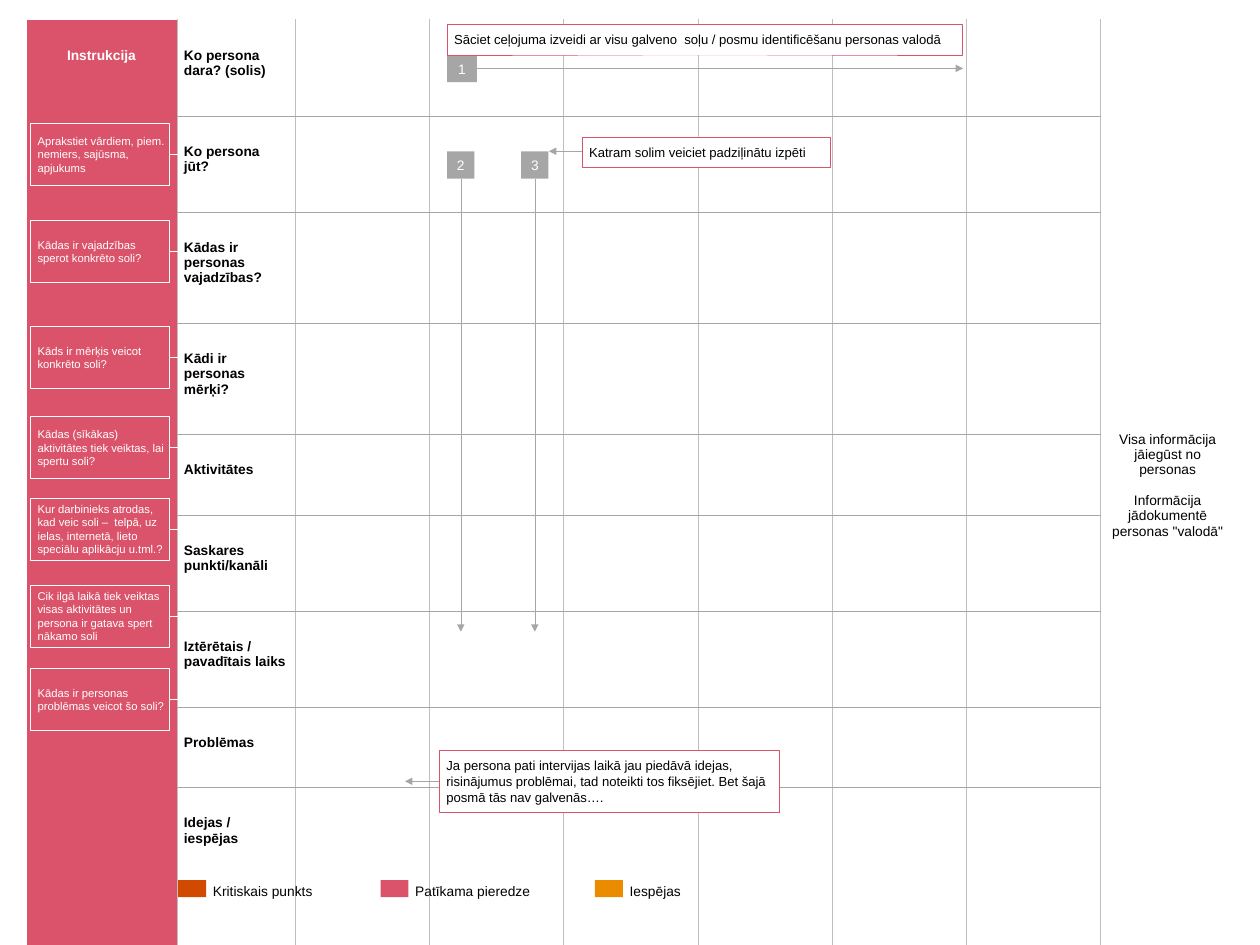
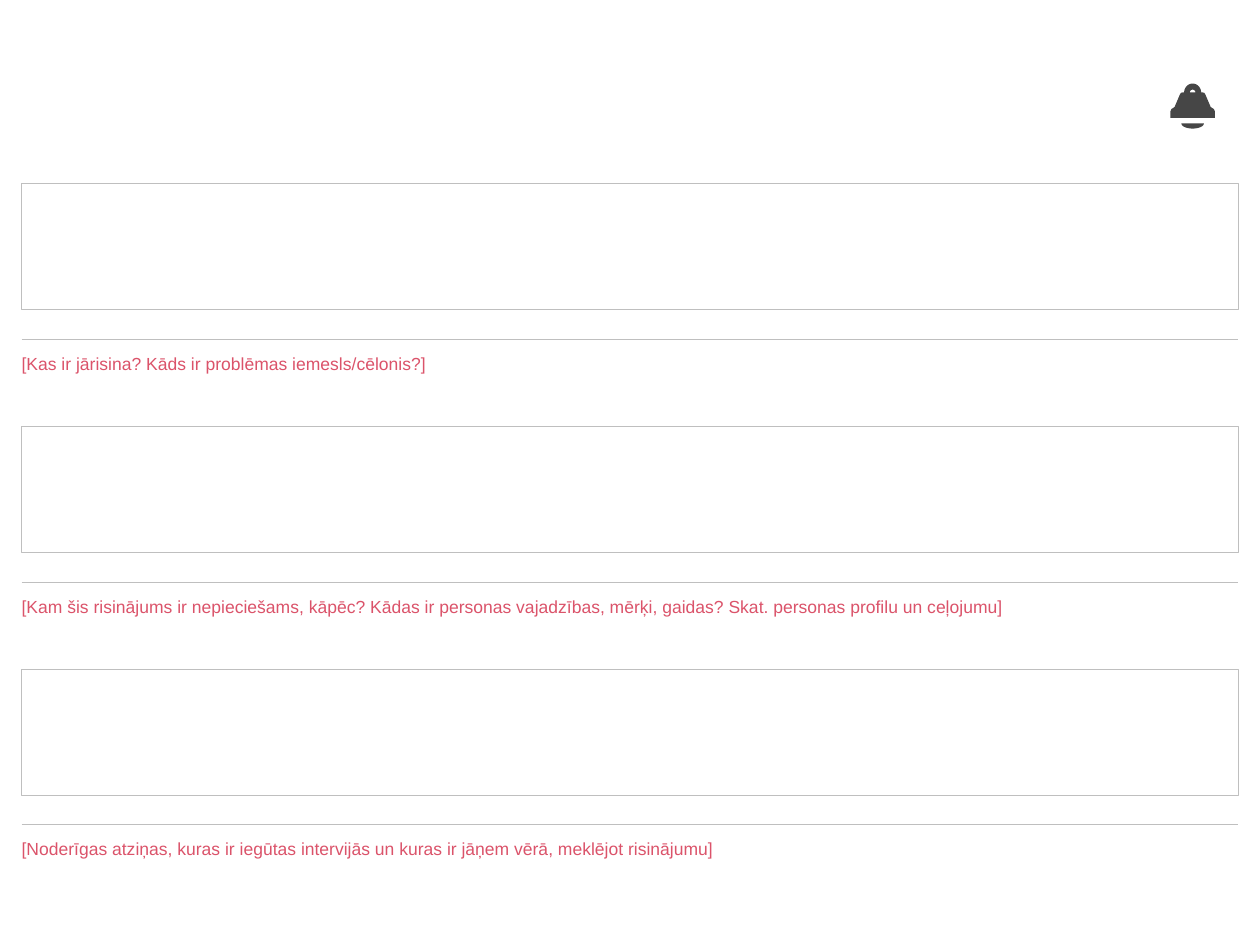
"""Build a persona journey canvas and a problem definition sheet."""
import math
from dataclasses import dataclass

from lxml import etree
from pptx import Presentation
from pptx import util as u
from pptx.dml.color import RGBColor
from pptx.enum import shapes, text
from pptx.oxml.ns import qn

Cm, Pt = u.Cm, u.Pt
FONT = "Arial"
WHITE = RGBColor(0xFF, 0xFF, 0xFF)
BLACK = RGBColor(0, 0, 0)
ROSE = RGBColor(0xDB, 0x53, 0x6A)
ORANGE = RGBColor(0xD0, 0x4A, 0x02)
AMBER = RGBColor(0xEB, 0x8C, 0x00)
GREY = RGBColor(0xA6, 0xA6, 0xA6)
LIGHT_GREY = RGBColor(0xBF, 0xBF, 0xBF)
CHARCOAL = RGBColor(0x46, 0x46, 0x46)
HAIRLINE = 0.25
LEFT, CENTER = text.PP_ALIGN.LEFT, text.PP_ALIGN.CENTER

COLUMN_WIDTHS = [4.25, 3.33] + [3.79] * 7
CELL_INSETS = (0.2, 0.79, 0.2, 0.79)
HINT_LEFT, HINT_WIDTH, HINT_HEIGHT = 0.86, 3.91, 1.75
BADGE_SIZE = 0.77


@dataclass
class Style:
    """Look of the text in a box or cell."""
    size: float
    color: RGBColor = BLACK
    bold: bool = False
    align: text.PP_ALIGN = LEFT


@dataclass
class Box:
    """Rectangle with an optional fill, outline and text, in centimetres."""
    left: float
    top: float
    width: float
    height: float
    fill: RGBColor | None = None
    line: RGBColor | None = None
    words: str = ""
    style: Style | None = None
    insets: tuple = (0.25, 0.13, 0.25, 0.13)


@dataclass
class Line:
    """Straight line, with an arrowhead at its end if asked."""
    x1: float
    y1: float
    x2: float
    y2: float
    color: RGBColor = GREY
    weight: float = HAIRLINE
    arrow: bool = False


@dataclass
class Step:
    """Row of the journey table."""
    label: str
    height: float


@dataclass
class Hint:
    """Instruction beside a journey row."""
    top: float
    words: str


@dataclass
class LegendItem:
    """Coloured swatch with its label."""
    left: float
    color: RGBColor
    label: str
    label_width: float


@dataclass
class Question:
    """Prompt under an answer box."""
    words: str
    width: float


HEADING = Style(11, WHITE, True, CENTER)
STEP_LABEL = Style(11, bold=True)
SIDE_NOTE = Style(11, align=CENTER)
BADGE_STYLE = Style(11, WHITE, align=CENTER)
HINT_STYLE = Style(9, WHITE)
CALLOUT_STYLE = Style(10.5)
LEGEND_STYLE = Style(11)
QUESTION_STYLE = Style(14, ROSE)

STEPS = [
    Step("Ko persona dara? (solis)", 2.71),
    Step("Ko persona jūt?", 2.71),
    Step("Kādas ir personas vajadzības?", 3.14),
    Step("Kādi ir personas mērķi?", 3.14),
    Step("Aktivitātes", 2.27),
    Step("Saskares punkti/kanāli", 2.71),
    Step("Iztērētais / pavadītais laiks", 2.71),
    Step("Problēmas", 2.27),
    Step("Idejas / iespējas", 4.45),
]
SIDE_NOTES = ["Visa informācija jāiegūst no personas",
              "Informācija jādokumentē personas \"valodā\""]
HINTS = [
    Hint(3.48, "Aprakstiet vārdiem, piem. nemiers, sajūsma, apjukums"),
    Hint(6.22, "Kādas ir vajadzības sperot konkrēto soli?"),
    Hint(9.22, "Kāds ir mērķis veicot konkrēto soli?"),
    Hint(11.76, "Kādas (sīkākas)  aktivitātes tiek veiktas, lai spertu soli?"),
    Hint(14.05, "Kur darbinieks atrodas, kad veic soli –  telpā, uz ielas, "
                "internetā, lieto speciālu aplikācju u.tml.?"),
    Hint(16.51, "Cik ilgā laikā tiek veiktas visas aktivitātes un persona "
                "ir gatava spert nākamo soli"),
    Hint(18.87, "Kādas ir personas problēmas veicot šo soli?"),
]
LEGEND = [
    LegendItem(5.03, ORANGE, "Kritiskais punkts", 2.95),
    LegendItem(10.74, ROSE, "Patīkama pieredze", 3.25),
    LegendItem(16.79, AMBER, "Iespējas", 1.57),
]
QUESTIONS = [
    Question("[Kas ir jārisina? Kāds ir problēmas iemesls/cēlonis?]", 11.48),
    Question("[Kam šis risinājums ir nepieciešams, kāpēc? Kādas ir personas "
             "vajadzības, mērķi, gaidas? Skat. personas profilu un ceļojumu]", 27.84),
    Question("[Noderīgas atziņas, kuras ir iegūtas intervijās un kuras ir "
             "jāņem vērā, meklējot risinājumu]", 19.61),
]


def style_paragraph(paragraph, words: str, style: Style) -> None:
    """Fill a paragraph and set its font."""
    paragraph.text = words
    paragraph.alignment = style.align
    font = paragraph.font
    font.name, font.size, font.bold = FONT, Pt(style.size), style.bold
    font.color.rgb = style.color


def set_insets(target, insets: tuple) -> None:
    """Set left, top, right and bottom margins of a cell or text frame."""
    for side, inset in zip(("left", "top", "right", "bottom"), insets):
        setattr(target, f"margin_{side}", Cm(inset))


def draw_box(slide, box: Box) -> None:
    """Draw a rectangle."""
    shape = slide.shapes.add_shape(shapes.MSO_SHAPE.RECTANGLE, Cm(box.left), Cm(box.top),
                                   Cm(box.width), Cm(box.height))
    shape.shadow.inherit = False
    if box.fill is None:
        shape.fill.background()
    else:
        shape.fill.solid()
        shape.fill.fore_color.rgb = box.fill
    if box.line is None:
        shape.line.fill.background()
    else:
        shape.line.color.rgb = box.line
        shape.line.width = Pt(HAIRLINE)
    if box.style:
        frame = shape.text_frame
        frame.word_wrap = True
        frame.vertical_anchor = text.MSO_ANCHOR.MIDDLE
        set_insets(frame, box.insets)
        style_paragraph(frame.paragraphs[0], box.words, box.style)


def draw_line(slide, line: Line) -> None:
    """Draw a connector."""
    connector = slide.shapes.add_connector(shapes.MSO_CONNECTOR.STRAIGHT, Cm(line.x1),
                                           Cm(line.y1), Cm(line.x2), Cm(line.y2))
    connector.line.color.rgb = line.color
    connector.line.width = Pt(line.weight)
    if line.arrow:
        etree.SubElement(connector.line._get_or_add_ln(), qn("a:tailEnd"), type="triangle")
    etree.SubElement(connector._element.spPr, qn("a:effectLst"))


def draw_label(slide, left: float, top: float, width: float, height: float,
               words: str, style: Style, top_inset: float = 0) -> None:
    """Draw one unwrapped line of text."""
    frame = slide.shapes.add_textbox(Cm(left), Cm(top), Cm(width), Cm(height)).text_frame
    frame.word_wrap = False
    frame.auto_size = text.MSO_AUTO_SIZE.SHAPE_TO_FIT_TEXT
    set_insets(frame, (0, top_inset, 0, 0))
    style_paragraph(frame.paragraphs[0], words, style)


def draw_callout(slide, left: float, top: float, width: float, height: float,
                 words: str) -> None:
    """Draw a white note with a rose outline."""
    draw_box(slide, Box(left, top, width, height, WHITE, ROSE, words, CALLOUT_STYLE,
                        (0.2, 0.2, 0.2, 0.2)))


def set_border(cell, side: str, color: RGBColor) -> None:
    """Add a hairline to one side of a cell."""
    line = etree.SubElement(cell._tc.get_or_add_tcPr(), qn(f"a:ln{side}"),
                            w=str(Pt(HAIRLINE)))
    fill = etree.SubElement(line, qn("a:solidFill"))
    etree.SubElement(fill, qn("a:srgbClr"), val=str(color))


def draw_journey_table(slide) -> None:
    """Draw the journey grid with its instruction band and side note."""
    last_row, last_column = len(STEPS) - 1, len(COLUMN_WIDTHS) - 1
    table = slide.shapes.add_table(
        len(STEPS), len(COLUMN_WIDTHS), Cm(0.74), Cm(0.56), Cm(sum(COLUMN_WIDTHS)),
        Cm(sum(step.height for step in STEPS))).table
    table.first_row = table.horz_banding = False
    for column, width in zip(table.columns, COLUMN_WIDTHS):
        column.width = Cm(width)
    for row_index, step in enumerate(STEPS):
        table.rows[row_index].height = Cm(step.height)
        for column_index in range(last_column + 1):
            cell = table.cell(row_index, column_index)
            inner = 0 < column_index < last_column
            if column_index > 0:
                set_border(cell, "L", LIGHT_GREY)
            if column_index < last_column:
                set_border(cell, "R", LIGHT_GREY)
            if inner and row_index > 0:
                set_border(cell, "T", GREY)
            if inner and row_index < last_row:
                set_border(cell, "B", GREY)
            cell.fill.background()
        label_cell = table.cell(row_index, 1)
        set_insets(label_cell, CELL_INSETS)
        style_paragraph(label_cell.text_frame.paragraphs[0], step.label, STEP_LABEL)

    band, side = table.cell(0, 0), table.cell(0, last_column)
    band.merge(table.cell(last_row, 0))
    side.merge(table.cell(last_row, last_column))
    for cell in (band, side):
        set_insets(cell, CELL_INSETS)
    band.fill.solid()
    band.fill.fore_color.rgb = ROSE
    style_paragraph(band.text_frame.paragraphs[0], "Instrukcija", HEADING)
    side.vertical_anchor = text.MSO_ANCHOR.MIDDLE
    first, second = side.text_frame.paragraphs[0], side.text_frame.add_paragraph()
    for paragraph, words in zip((first, second), SIDE_NOTES):
        style_paragraph(paragraph, words, SIDE_NOTE)
    second.space_before = Pt(12.5)


def draw_bell(slide) -> None:
    """Draw the bell icon."""
    center = 33.66

    def dome(radius: float, height: float, base: float) -> list:
        angles = [math.pi * step / 16 for step in range(17)]
        return [(radius * math.cos(a), base - height * math.sin(a)) for a in angles]

    right = [(0.63, 3.33), (0.63, 3.15), (0.6, 3.08), (0.51, 3.02), (0.36, 2.67),
             (0.33, 2.62), (0.28, 2.61)]
    body = right + dome(0.24, 0.25, 2.61) + [(-x, y) for x, y in reversed(right)]
    outlines = [[(Cm(center + x), Cm(y)) for x, y in outline]
                for outline in (body, dome(0.08, 0.08, 2.61), dome(0.32, -0.15, 3.48))]
    builder = slide.shapes.build_freeform(*outlines[0][0])
    for index, outline in enumerate(outlines):
        if index:
            builder.move_to(*outline[0])
        builder.add_line_segments(outline[1:], close=True)
    bell = builder.convert_to_shape()
    bell.shadow.inherit = False
    bell.fill.solid()
    bell.fill.fore_color.rgb = CHARCOAL
    bell.line.fill.background()


def build_journey(slide) -> None:
    """Build the persona journey canvas."""
    draw_journey_table(slide)
    draw_callout(slide, 12.4, 21.18, 9.6, 1.75,
                 "Ja persona pati intervijas laikā jau piedāvā idejas, risinājumus problēmai, "
                 "tad noteikti tos fiksējiet. Bet šajā posmā tās nav galvenās….")
    draw_line(slide, Line(12.4, 22.05, 11.43, 22.05, arrow=True))
    for number, left in (("2", 12.62), ("3", 14.71)):
        middle = left + BADGE_SIZE / 2
        draw_box(slide, Box(left, 4.27, BADGE_SIZE, BADGE_SIZE, GREY, None, number, BADGE_STYLE))
        draw_line(slide, Line(middle, 5.05, middle, 17.83, arrow=True))
    for item in LEGEND:
        draw_label(slide, item.left + 0.98, 24.92, item.label_width, 0.48, item.label,
                   LEGEND_STYLE)
        draw_box(slide, Box(item.left, 24.84, 0.79, 0.48, item.color))
    for hint in HINTS:
        middle = hint.top + HINT_HEIGHT / 2
        draw_box(slide, Box(HINT_LEFT, hint.top, HINT_WIDTH, HINT_HEIGHT, None, WHITE,
                            hint.words, HINT_STYLE, (0.2, 0.1, 0.1, 0.1)))
        draw_line(slide, Line(HINT_LEFT + HINT_WIDTH, middle, 5.18, middle, WHITE, 0.5))
    draw_callout(slide, 16.43, 3.86, 7.01, 0.86, "Katram solim veiciet padziļinātu izpēti")
    draw_line(slide, Line(16.43, 4.27, 15.49, 4.27, arrow=True))
    draw_box(slide, Box(12.62, 1.55, 0.84, BADGE_SIZE, GREY, None, "1", BADGE_STYLE))
    draw_line(slide, Line(13.46, 1.93, 27.18, 1.93, arrow=True))
    draw_callout(slide, 12.62, 0.69, 14.55, 0.86, "Sāciet ceļojuma izveidi ar visu galveno  "
                 "soļu / posmu identificēšanu personas valodā")


def build_problem(slide) -> None:
    """Build the problem definition sheet."""
    left, width, pitch = 0.61, 34.34, 6.85
    for index, question in enumerate(QUESTIONS):
        top = 5.18 + index * pitch
        rule = top + 4.39
        draw_line(slide, Line(left, rule, left + width, rule, LIGHT_GREY))
        draw_label(slide, left, rule + 0.19, question.width, 0.81, question.words,
                   QUESTION_STYLE, 0.2)
        draw_box(slide, Box(left, top, width, 3.56, None, LIGHT_GREY))
    draw_bell(slide)


def main() -> None:
    """Build and save the presentation."""
    presentation = Presentation()
    presentation.slide_width, presentation.slide_height = Cm(35.56), Cm(26.67)
    for build in (build_journey, build_problem):
        build(presentation.slides.add_slide(presentation.slide_layouts[6]))
    presentation.save("out.pptx")


if __name__ == "__main__":
    main()
